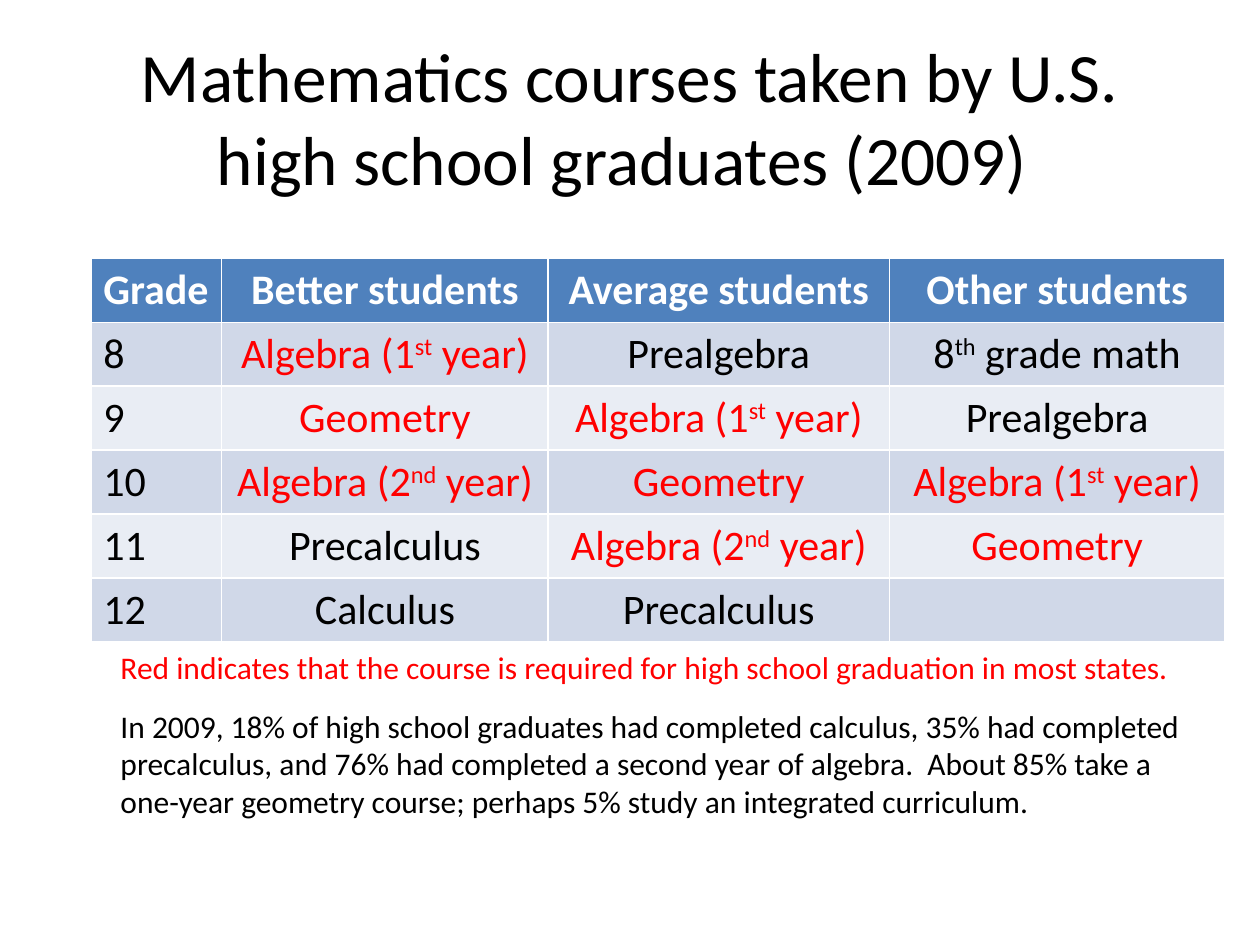
from pptx import Presentation
from pptx.dml.color import RGBColor
from pptx.enum.text import MSO_ANCHOR, PP_ALIGN
from pptx.util import Cm, Pt

BLACK = RGBColor(0x00, 0x00, 0x00)
WHITE = RGBColor(0xFF, 0xFF, 0xFF)
RED = RGBColor(0xFF, 0x00, 0x00)
HEADER_BLUE = RGBColor(0x4F, 0x81, 0xBD)
BANDS = [RGBColor(0xD0, 0xD8, 0xE8), RGBColor(0xE9, 0xED, 0xF4)]

FONT = "Calibri"
COLUMN_WIDTHS = [2.64, 6.58, 6.88, 6.76]
HEADERS = ["Grade", "Better students", "Average students", "Other students"]

# A caret pair encloses a superscript.
ALGEBRA_1 = "Algebra (1^st^ year)"
ALGEBRA_2 = "Algebra (2^nd^ year)"
GEOMETRY = "Geometry"
REQUIRED = {ALGEBRA_1, GEOMETRY, ALGEBRA_2}
COURSES = [
    ["8", ALGEBRA_1, "Prealgebra", "8^th^ grade math"],
    ["9", GEOMETRY, ALGEBRA_1, "Prealgebra"],
    ["10", ALGEBRA_2, GEOMETRY, ALGEBRA_1],
    ["11", "Precalculus", ALGEBRA_2, GEOMETRY],
    ["12", "Calculus", "Precalculus", ""],
]

REQUIRED_NOTE = [
    "Red indicates that the course is required for high school graduation in most states.",
]
COMPLETION_NOTE = [
    "In 2009, 18% of high school graduates had completed calculus, 35% had completed",
    "precalculus, and 76% had completed a second year of algebra.  About 85% take a",
    "one-year geometry course; perhaps 5% study an integrated curriculum.",
]


def add_spans(para, text, size, color, bold=False):
    """Add text run by run, raising every part enclosed in carets."""
    for index, part in enumerate(text.split("^")):
        if not part:
            continue
        span = para.add_run()
        span.text = part
        span.font.name = FONT
        span.font.size = Pt(size)
        span.font.bold = bold
        span.font.color.rgb = color
        if index % 2:
            span._r.get_or_add_rPr().set("baseline", "30000")


def place_title(page, left, top, width, height):
    title = page.shapes.title
    title.left, title.top = Cm(left), Cm(top)
    title.width, title.height = Cm(width), Cm(height)
    frame = title.text_frame
    frame.word_wrap = True
    frame.vertical_anchor = MSO_ANCHOR.MIDDLE
    para = frame.paragraphs[0]
    para.alignment = PP_ALIGN.CENTER
    add_spans(para, "Mathematics courses taken by U.S. high school graduates (2009) ",
              39.6, BLACK)


def add_course_table(page, left, top, width, height):
    rows = [HEADERS] + COURSES
    table = page.shapes.add_table(len(rows), len(HEADERS), Cm(left), Cm(top),
                                  Cm(width), Cm(height)).table
    for column, column_width in zip(table.columns, COLUMN_WIDTHS):
        column.width = Cm(column_width)
    for row_index, row in enumerate(rows):
        is_header = row_index == 0
        fill = HEADER_BLUE if is_header else BANDS[(row_index - 1) % 2]
        for column_index, text in enumerate(row):
            cell = table.cell(row_index, column_index)
            cell.fill.solid()
            cell.fill.fore_color.rgb = fill
            para = cell.text_frame.paragraphs[0]
            para.alignment = PP_ALIGN.CENTER if column_index else PP_ALIGN.LEFT
            if is_header:
                color = WHITE
            else:
                color = RED if text in REQUIRED else BLACK
            add_spans(para, text, 24, color, bold=is_header)


def add_note(page, lines, color, left, top, width, height):
    box = page.shapes.add_textbox(Cm(left), Cm(top), Cm(width), Cm(height))
    frame = box.text_frame
    frame.word_wrap = False
    for index, line in enumerate(lines):
        para = frame.add_paragraph() if index else frame.paragraphs[0]
        para.alignment = PP_ALIGN.LEFT
        add_spans(para, line, 18, color)


def main():
    deck = Presentation()
    deck.slide_width, deck.slide_height = Cm(25.4), Cm(19.05)
    page = deck.slides.add_slide(deck.slide_layouts[5])
    place_title(page, 1.27, 0.76, 22.86, 3.18)
    add_course_table(page, 1.83, 5.21, sum(COLUMN_WIDTHS), 7.62)
    add_note(page, REQUIRED_NOTE, RED, 2.18, 12.93, 21.82, 1.02)
    add_note(page, COMPLETION_NOTE, BLACK, 2.18, 14.12, 22.15, 2.57)
    deck.save("out.pptx")


if __name__ == "__main__":
    main()
